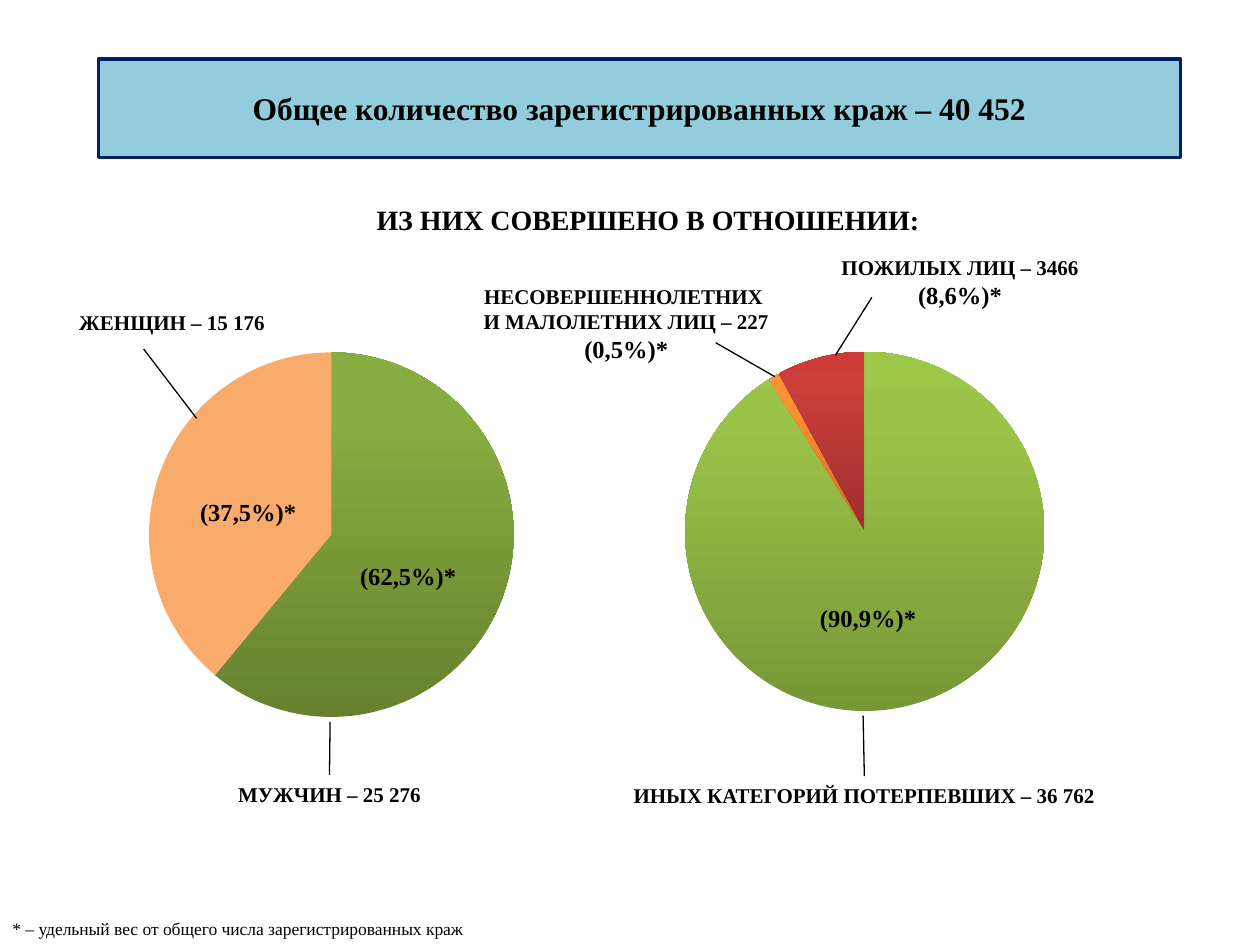
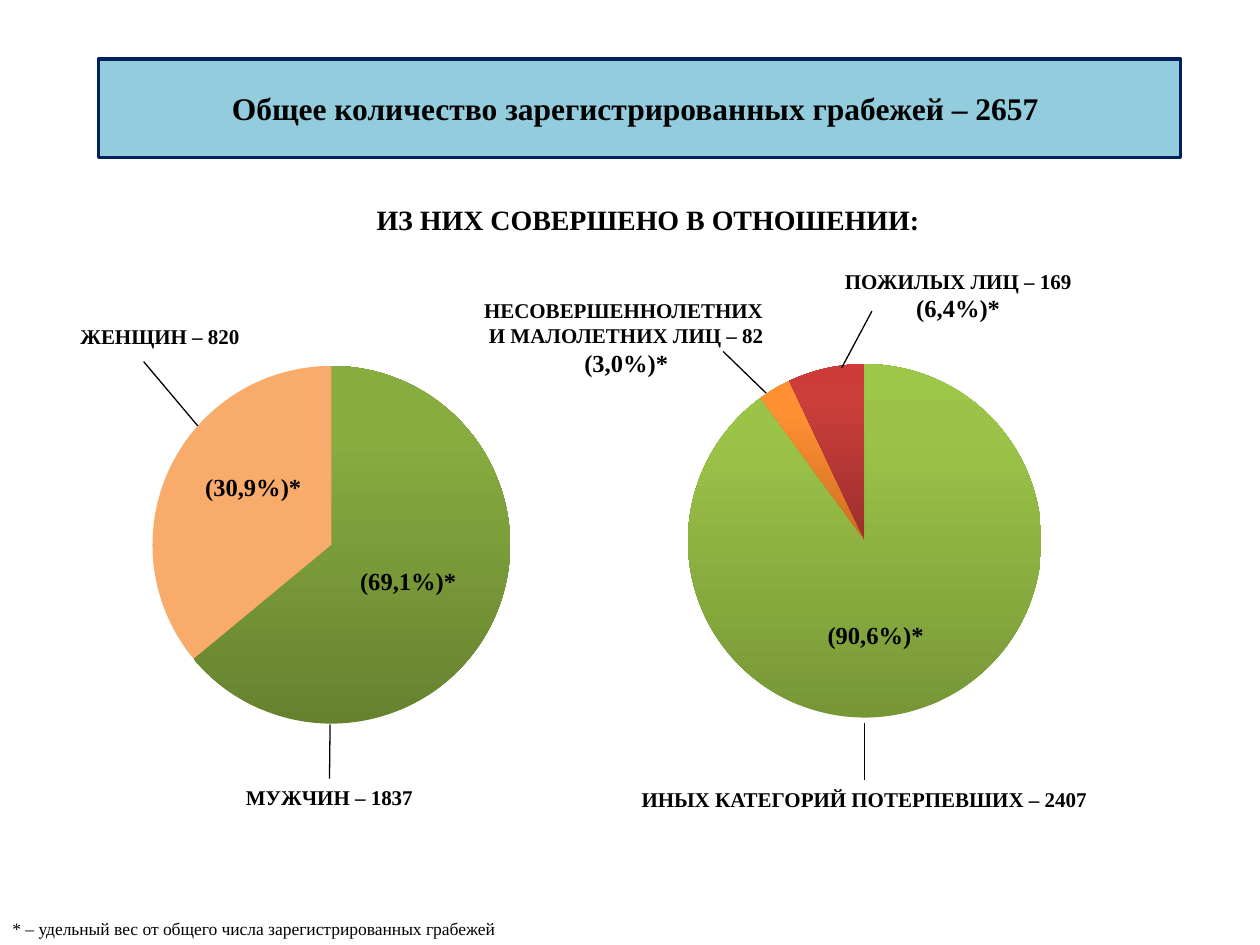
from copy import deepcopy

from lxml import etree
from pptx import Presentation
from pptx import util as u
from pptx.chart.data import CategoryChartData
from pptx.dml.color import RGBColor
from pptx.enum import chart as charts, shapes, text
from pptx.oxml import parse_xml
from pptx.oxml.ns import nsdecls, qn

COLUMNS, ROWS = 100, 75
CELL = u.Inches(0.1)

BLACK = "000000"
BAND_FILL, BAND_LINE = "93CDDD", "002060"
DARK_GREEN = ("66822F", "87AC40", "8AAF41")
GREEN = ("779737", "9BC348", "9DC746")
ORANGE = ("CC6E20", "FF9034", "FF9136")
RED = ("9C2F2D", "CB3E3A", "CE3B37")
PEACH = "F9AB6B"
GRADIENT_POSITIONS = (0, 0.8, 1)

LEFT_PLOT = (0.17, 0.04, 0.66, 0.91)
RIGHT_PLOT = (0.23, 0.2, 0.53, 0.61)


def color(hex_code):
    return RGBColor.from_string(hex_code)


def cells(*counts):
    return [round(count * CELL) for count in counts]


class Deck:
    """Holds the shared style and the slide being built; places are in grid cells."""

    font = "Times New Roman"
    chart_font = "Calibri"
    label_size, percent_size = 12, 14

    def __init__(self):
        self.presentation = Presentation()
        self.presentation.slide_width = COLUMNS * CELL
        self.presentation.slide_height = ROWS * CELL
        self.slide = None

    def add_run(self, paragraph, words, size, bold=True):
        run = paragraph.add_run()
        run.text = words
        run.font.name = self.font
        run.font.size = u.Pt(size)
        run.font.bold = bold
        run.font.color.rgb = color(BLACK)

    def new_slide(self, title):
        layout = self.presentation.slide_layouts.get_by_name("Title Only")
        self.slide = self.presentation.slides.add_slide(layout)
        band = self.slide.shapes.title
        band.left, band.top, band.width, band.height = cells(7.8, 4.7, 85.9, 7.8)
        geometry = etree.SubElement(band.element.spPr, qn("a:prstGeom"), prst="roundRect")
        etree.SubElement(geometry, qn("a:avLst"))
        band.fill.solid()
        band.fill.fore_color.rgb = color(BAND_FILL)
        band.line.color.rgb = color(BAND_LINE)
        band.line.width = u.Pt(2)
        frame = band.text_frame
        frame.auto_size = text.MSO_AUTO_SIZE.NONE
        frame.vertical_anchor = text.MSO_ANCHOR.MIDDLE
        paragraph = frame.paragraphs[0]
        paragraph.alignment = text.PP_ALIGN.CENTER
        self.add_run(paragraph, title, 18)

    def text_box(self, box, anchor=text.MSO_ANCHOR.TOP, wrap=True):
        shape = self.slide.shapes.add_textbox(*cells(*box))
        shape.text_frame.word_wrap = wrap
        shape.text_frame.vertical_anchor = anchor
        return shape

    def line_of_text(self, box, words, size, bold=True, wrap=True):
        shape = self.text_box(box, wrap=wrap)
        self.add_run(shape.text_frame.paragraphs[0], words, size, bold)

    def label(self, box, words, size=label_size):
        """Adds one centred line in the middle of its box."""
        shape = self.text_box(box, text.MSO_ANCHOR.MIDDLE)
        paragraph = shape.text_frame.paragraphs[0]
        paragraph.alignment = text.PP_ALIGN.CENTER
        self.add_run(paragraph, words, size)
        return shape

    def percent(self, box, words):
        self.label(box, words, self.percent_size)

    def group_label(self, box, lines, share):
        """Adds the name of a group with its larger share on the last line."""
        frame = self.text_box(box).text_frame
        for number, words in enumerate(lines):
            paragraph = frame.add_paragraph() if number else frame.paragraphs[0]
            paragraph.alignment = text.PP_ALIGN.CENTER
            self.add_run(paragraph, words, self.label_size)
        paragraph.add_line_break()
        self.add_run(paragraph, share, self.percent_size)

    def leader(self, start, end, label=None):
        line = self.slide.shapes.add_connector(
            shapes.MSO_CONNECTOR.STRAIGHT, *cells(*start, *end))
        line.line.color.rgb = color(BLACK)
        line.line.width = u.Pt(0.75)
        etree.SubElement(line.element.spPr, qn("a:effectLst"))
        if label is not None:
            line.end_connect(label, 0)

    def pie(self, box, values, fills, plot_box):
        data = CategoryChartData()
        data.categories = [str(number + 1) for number in range(len(values))]
        data.add_series("Series 1", values)
        chart = self.slide.shapes.add_chart(
            charts.XL_CHART_TYPE.PIE, *cells(*box), data).chart
        chart.has_legend = chart.has_title = False
        chart.font.name = self.chart_font
        chart.font.size = u.Pt(10)
        chart.font.color.rgb = color(BLACK)
        plot = chart.plots[0]
        plot.vary_by_categories = True
        for number, paint in enumerate(fills):
            fill = plot.series[0].points[number].format.fill
            if isinstance(paint, str):
                fill.solid()
                fill.fore_color.rgb = color(paint)
            else:
                self.shade(chart, fill, paint)
        self.place_plot(chart, plot_box)

    def shade(self, chart, fill, paints):
        """Gives the newest slice a three-stop gradient, dark at the bottom."""
        fill.gradient()
        fill.gradient_angle = 90
        stop_list = chart.element.xpath(".//a:gsLst")[-1]
        stop_list.insert(1, deepcopy(stop_list[1]))
        for stop, position, paint in zip(fill.gradient_stops, GRADIENT_POSITIONS, paints):
            stop.position = position
            stop.color.rgb = color(paint)

    def place_plot(self, chart, plot_box):
        area = chart.element.xpath(".//c:plotArea")[0]
        for layout in area.findall(qn("c:layout")):
            area.remove(layout)
        modes = '<c:layoutTarget val="inner"/><c:xMode val="edge"/><c:yMode val="edge"/>'
        sizes = "".join(f'<c:{name} val="{share}"/>' for name, share in zip("xywh", plot_box))
        area.insert(0, parse_xml(
            f'<c:layout {nsdecls("c")}><c:manualLayout>{modes}{sizes}'
            "</c:manualLayout></c:layout>"))


def add_crime_slide(deck, crime):
    upper, lower = crime["upper_shift"], crime["lower_shift"]
    deck.new_slide(crime["title"])
    deck.line_of_text((28.9, 15.6, 45.7, 3.7), "ИЗ НИХ СОВЕРШЕНО В ОТНОШЕНИИ:", 16, wrap=False)
    deck.line_of_text((0, 72.4, 51.8, 2.6),
                      f"* – удельный вес от общего числа зарегистрированных {crime['noun']}",
                      10, bold=False)

    left_top, left_height, right_top, right_height = crime["chart_rows"]
    deck.pie((4.2, left_top, 44.2, left_height), crime["sexes"],
             (DARK_GREEN, PEACH), LEFT_PLOT)
    deck.pie((42, right_top, 53.8, right_height), crime["ages"],
             (GREEN, ORANGE, RED), RIGHT_PLOT)

    elderly, elderly_share = crime["elderly"]
    deck.group_label((65.7, 19.7 + upper, crime["elderly_width"], 5.3), [elderly], elderly_share)
    minors, minors_share = crime["minors"]
    deck.group_label((37.3, 22 + upper, 24.8, 7.4),
                     ["НЕСОВЕРШЕННОЛЕТНИХ ", minors], minors_share)
    for center_x, center_y, share in crime["slice_shares"]:
        deck.percent((center_x - 5.2, center_y - 1.95, 10.4, 3.9), share)

    deck.label((4.7, 24.1 + upper, crime["women_width"], 3), crime["women"])
    men = deck.label((17.8, 61.5 + lower, 16.7, 3), crime["men"])
    others = deck.label((47.3, 61.6 + lower, 42.6, 3), crime["others"])

    for start, end in crime["leaders"]:
        deck.leader(start, end)
    men_start, others_start = crime["lower_leaders"]
    deck.leader(men_start, (26.2, 61.5 + lower), men)
    deck.leader(others_start, (68.6, 61.6 + lower), others)


THEFTS = {
    "title": "Общее количество зарегистрированных краж – 40 452",
    "noun": "краж",
    "upper_shift": 0, "lower_shift": 0,
    "chart_rows": (26.7, 31.8, 18.5, 46.9),
    "sexes": (61, 39), "ages": (92, 1, 8),
    "elderly": ("ПОЖИЛЫХ ЛИЦ – 3466", "(8,6%)*"), "elderly_width": 21,
    "minors": ("И МАЛОЛЕТНИХ ЛИЦ – 227", "(0,5%)*"),
    "women": "ЖЕНЩИН – 15 176", "women_width": 17.9,
    "men": "МУЖЧИН – 25 276",
    "others": "ИНЫХ КАТЕГОРИЙ ПОТЕРПЕВШИХ – 36 762",
    "slice_shares": ((32.4, 45.7, "(62,5%)*"), (19.7, 40.6, "(37,5%)*"),
                     (68.9, 49, "(90,9%)*")),
    "leaders": (((66.3, 28.2), (69.2, 23.6)), ((11.4, 27.7), (15.6, 33.2)),
                ((56.8, 27.2), (61.5, 29.9))),
    "lower_leaders": ((26.2, 57.3), (68.5, 56.8)),
}

ROBBERIES = {
    "title": "Общее количество зарегистрированных грабежей – 2657 ",
    "noun": "грабежей",
    "upper_shift": 1.1, "lower_shift": 0.3,
    "chart_rows": (27.8, 31.2, 19.7, 46),
    "sexes": (64, 36), "ages": (90, 3, 7),
    "elderly": ("ПОЖИЛЫХ ЛИЦ – 169", "(6,4%)*"), "elderly_width": 20.7,
    "minors": ("И МАЛОЛЕТНИХ ЛИЦ – 82", "(3,0%)*"),
    "women": "ЖЕНЩИН – 820", "women_width": 16,
    "men": "МУЖЧИН – 1837",
    "others": "ИНЫХ КАТЕГОРИЙ ПОТЕРПЕВШИХ – 2407",
    "slice_shares": ((32.4, 46.1, "(69,1%)*"), (20.1, 38.6, "(30,9%)*"),
                     (69.5, 50.4, "(90,6%)*")),
    "leaders": (((66.8, 29.2), (69.2, 24.7)), ((11.4, 28.7), (15.7, 33.8)),
                ((57.4, 27.9), (60.8, 31.2))),
    "lower_leaders": ((26.2, 57.5), (68.6, 57.4)),
}


def main():
    deck = Deck()
    for crime in (THEFTS, ROBBERIES):
        add_crime_slide(deck, crime)
    deck.presentation.save("out.pptx")


if __name__ == "__main__":
    main()
